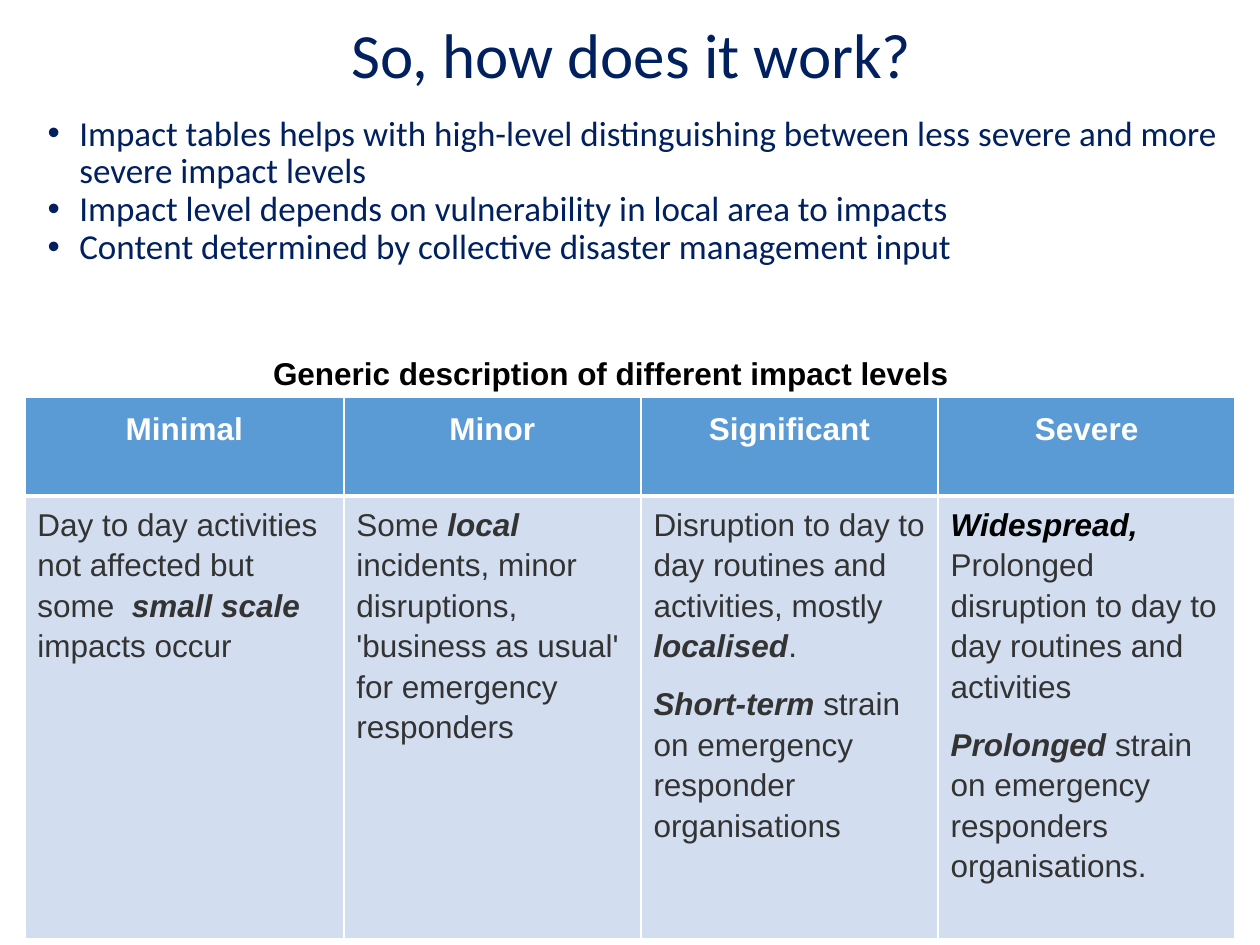
import lxml.etree
import pptx
import pptx.dml.color
import pptx.enum.text
import pptx.oxml.ns
import pptx.util

Cm = pptx.util.Cm
Pt = pptx.util.Pt
qn = pptx.oxml.ns.qn
CENTER = pptx.enum.text.PP_ALIGN.CENTER
MIDDLE = pptx.enum.text.MSO_ANCHOR.MIDDLE


def color(value):
    return pptx.dml.color.RGBColor.from_string(value)


def write(frame, text, font="Arial", size=18, fill="333333", emphasis="333333", bold=False,
          align=None, line=None, after=None, bullet=False):
    paragraph = frame.paragraphs[0]
    if paragraph.runs:
        paragraph = frame.add_paragraph()
    if bullet:
        properties = paragraph._p.get_or_add_pPr()
        properties.set("marL", str(Cm(0.64)))
        properties.set("indent", str(-Cm(0.64)))
        lxml.etree.SubElement(properties, qn("a:buFont"), typeface="Arial")
        lxml.etree.SubElement(properties, qn("a:buChar"), char="•")
    paragraph.alignment = align
    paragraph.line_spacing = line
    paragraph.space_after = after
    for index, part in enumerate(text.split("*")):
        if part:
            emphatic = index % 2 == 1
            run = paragraph.add_run()
            run.text = part
            run.font.name = font
            run.font.size = Pt(size)
            run.font.bold = bold or emphatic
            run.font.italic = emphatic
            run.font.color.rgb = color(emphasis if emphatic else fill)


presentation = pptx.Presentation()
presentation.slide_width = Cm(25.4)
presentation.slide_height = Cm(19.05)
slide = presentation.slides.add_slide(presentation.slide_layouts[6])

title = slide.shapes.add_textbox(Cm(1.3), Cm(0), Cm(22.86), Cm(2.16)).text_frame
title.word_wrap = True
title.vertical_anchor = MIDDLE
write(title, "So, how does it work?", font="Calibri", size=36, fill="002060", align=CENTER)

points = slide.shapes.add_textbox(Cm(0.71), Cm(2.21), Cm(24.2), Cm(4.4)).text_frame
points.word_wrap = True
for point in (
    "Impact tables helps with high-level distinguishing between less severe and more severe impact levels",
    "Impact level depends on vulnerability in local area to impacts",
    "Content determined by collective disaster management input",
):
    write(points, point, font="Calibri", size=20, fill="002060", line=0.9, bullet=True)

levels = {
    "Minimal": ["Day to day activities not affected but some  *small scale *impacts occur"],
    "Minor": ["Some *local* incidents, minor disruptions, 'business as usual' for emergency responders"],
    "Significant": [
        "Disruption to day to day routines and activities, mostly *localised*.",
        "*Short-term* strain on emergency responder organisations",
    ],
    "Severe": [
        "*Widespread, *Prolonged disruption to day to day routines and activities",
        "*Prolonged* strain on emergency responders organisations.",
    ],
}
table = slide.shapes.add_table(2, len(levels), Cm(0.5), Cm(8), Cm(24.41), Cm(10.93)).table
for column, width in zip(table.columns, (6.43, 5.99, 5.99, 5.99)):
    column.width = Cm(width)
for row, height in zip(table.rows, (2, 8.93)):
    row.height = Cm(height)

for index, (level, descriptions) in enumerate(levels.items()):
    header, body = table.cell(0, index), table.cell(1, index)
    for cell, fill, thick_side in ((header, "5B9BD5", "B"), (body, "D2DEEF", "T")):
        properties = cell._tc.get_or_add_tcPr()
        for side in "LRTB":
            border = lxml.etree.SubElement(
                properties, qn("a:ln" + side), w=str(Pt(3 if side == thick_side else 1)))
            solid = lxml.etree.SubElement(border, qn("a:solidFill"))
            lxml.etree.SubElement(solid, qn("a:srgbClr"), val="FFFFFF")
        cell.fill.solid()
        cell.fill.fore_color.rgb = color(fill)
    header.margin_left = header.margin_right = Cm(0.2)
    header.margin_top = header.margin_bottom = Cm(0.2)
    write(header.text_frame, level, fill="FFFFFF", bold=True, align=CENTER, line=1.15, after=Pt(15))
    for description in descriptions:
        emphasis = "000000" if description.startswith("*Widespread") else "333333"
        write(body.text_frame, description, emphasis=emphasis, line=1.15, after=Pt(10))

caption = slide.shapes.add_textbox(Cm(5.18), Cm(7.01), Cm(14.27), Cm(1.02)).text_frame
caption.word_wrap = True
write(caption, "Generic description of different impact levels", fill="000000", bold=True, align=CENTER)

presentation.save("out.pptx")
